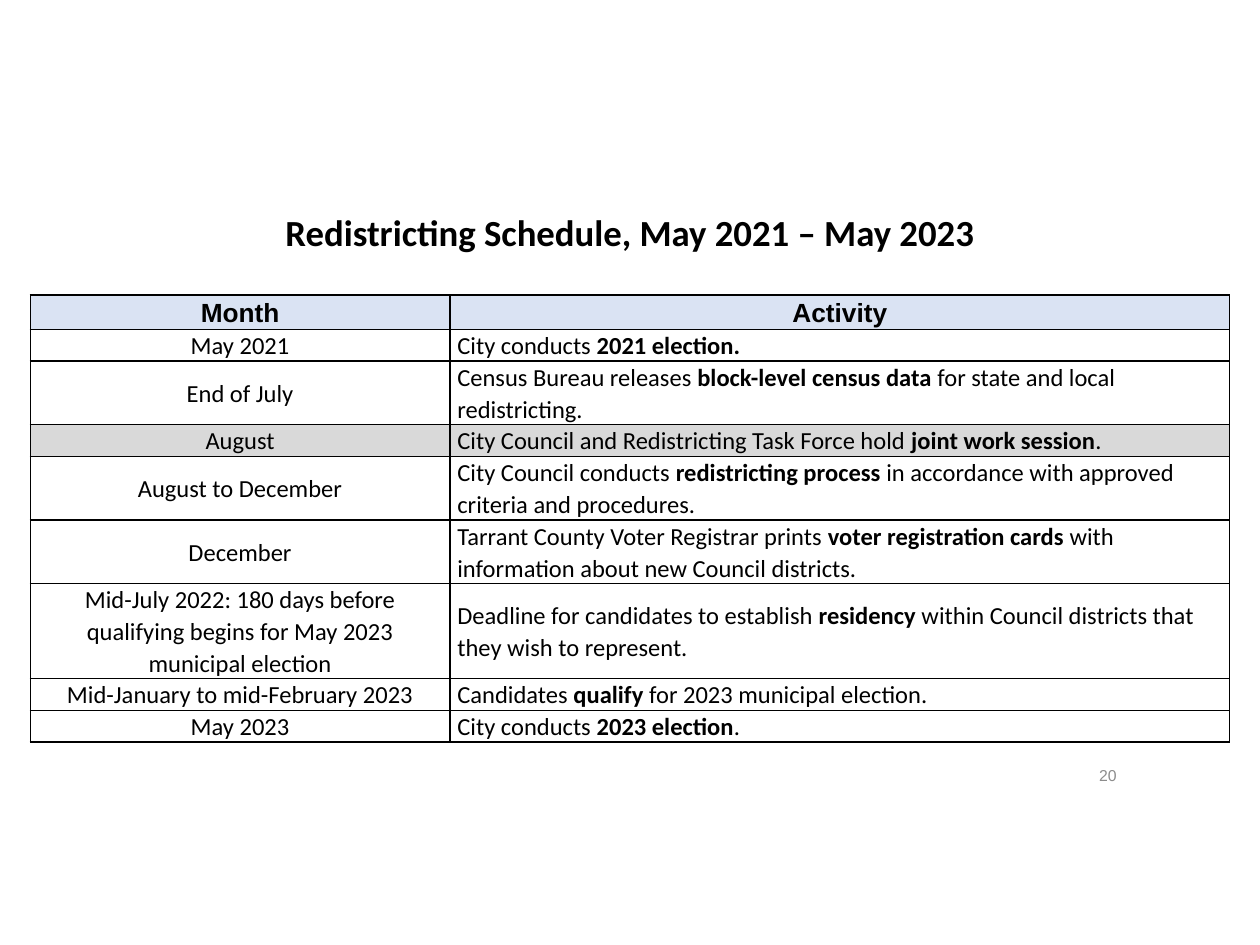
"""Build the redistricting schedule slide: a title, a two-column table and a page number."""
from lxml.etree import SubElement
from pptx import Presentation
from pptx.dml.color import RGBColor
from pptx.enum.text import MSO_ANCHOR as Anchor, PP_ALIGN as Align
from pptx.oxml.ns import qn
from pptx.util import Cm, Pt

TITLE = "Redistricting Schedule, May 2021 – May 2023"
PAGE_NUMBER = "20"
HEADINGS = ("Month", "Activity")
SCHEDULE = [
    ("May 2021", ("City conducts ", "2021 election."), 1),
    ("End of July", ("Census Bureau releases ", "block-level census data ",
                     "for state and local redistricting."), 2),
    ("August", ("City Council and Redistricting Task Force hold ",
                "joint work session", "."), 1),
    ("August to December", ("City Council conducts ", "redistricting process ",
                            "in accordance with approved criteria and procedures."), 2),
    ("December", ("Tarrant County Voter Registrar prints ", "voter registration cards ",
                  "with information about new Council districts."), 2),
    ("Mid-July 2022: 180 days before qualifying begins for May 2023 municipal election",
     ("Deadline for candidates to establish ", "residency",
      " within Council districts that they wish to represent."), 3),
    ("Mid-January to mid-February 2023",
     ("Candidates ", "qualify", " for 2023 municipal election."), 1),
    ("May 2023", ("City conducts ", "2023 election", "."), 1),
]
HIGHLIGHTED_MONTH = "August"
COLORS = {"text": "000000", "page": "8C8C8C", "border": "000000",
          "heading": "DAE3F3", "highlight": "D9D9D9"}
LEFT, TABLE_TOP = 0.61, 5.95
COLUMN_WIDTHS = (8.46, 15.72)
HEADING_HEIGHT, LINE_HEIGHT = 0.69, 0.64


def write_text(frame, parts, size, font="Calibri", color="text", align=Align.LEFT,
               spacing=1.0, bold=False):
    paragraph = frame.paragraphs[0]
    paragraph.alignment = align
    paragraph.line_spacing = spacing
    for index, part in enumerate(parts):
        run = paragraph.add_run()
        run.text = part
        run.font.name = font
        run.font.size = Pt(size)
        run.font.bold = bold or index == 1
        run.font.color.rgb = RGBColor.from_string(COLORS[color])


def add_text_box(slide, box, text, **text_format):
    frame = slide.shapes.add_textbox(*map(Cm, box)).text_frame
    frame.word_wrap = True
    frame.vertical_anchor = Anchor.MIDDLE
    write_text(frame, [text], **text_format)


def add_borders(cell):
    properties = cell._tc.get_or_add_tcPr()
    for side in ("a:lnL", "a:lnR", "a:lnT", "a:lnB"):
        line = SubElement(properties, qn(side), w=str(Pt(1)))
        fill = SubElement(line, qn("a:solidFill"))
        SubElement(fill, qn("a:srgbClr"), val=COLORS["border"])


def fill_cell(cell, parts, fill=None, **text_format):
    cell.vertical_anchor = Anchor.MIDDLE
    cell.margin_left = cell.margin_right = Cm(0.15)
    cell.margin_top = cell.margin_bottom = 0
    add_borders(cell)
    if fill:
        cell.fill.solid()
        cell.fill.fore_color.rgb = RGBColor.from_string(COLORS[fill])
    else:
        cell.fill.background()
    write_text(cell.text_frame, parts, spacing=1.07, **text_format)


def add_schedule(slide):
    heights = [HEADING_HEIGHT] + [LINE_HEIGHT * lines for _, _, lines in SCHEDULE]
    box = (LEFT, TABLE_TOP, sum(COLUMN_WIDTHS), sum(heights))
    table = slide.shapes.add_table(len(heights), len(HEADINGS), *map(Cm, box)).table
    table.first_row = table.horz_banding = False
    for column, width in zip(table.columns, COLUMN_WIDTHS):
        column.width = Cm(width)
    for row, height in zip(table.rows, heights):
        row.height = Cm(height)
    for index, heading in enumerate(HEADINGS):
        fill_cell(table.cell(0, index), [heading], fill="heading", size=15,
                  font="Arial", align=Align.CENTER, bold=True)
    for index, (month, activity, _) in enumerate(SCHEDULE, start=1):
        fill = "highlight" if month == HIGHLIGHTED_MONTH else None
        fill_cell(table.cell(index, 0), [month], fill=fill, size=14, align=Align.CENTER)
        fill_cell(table.cell(index, 1), activity, fill=fill, size=14)


def main():
    presentation = Presentation()
    presentation.slide_width, presentation.slide_height = Cm(25.4), Cm(19.05)
    slide = presentation.slides.add_slide(presentation.slide_layouts[6])
    add_text_box(slide, (LEFT, 4.17, sum(COLUMN_WIDTHS), 1.14), TITLE, size=21,
                 align=Align.CENTER, spacing=0.9, bold=True)
    add_text_box(slide, (17.04, 15.24, 5.72, 0.76), PAGE_NUMBER, size=9,
                 font="Arial", color="page", align=Align.RIGHT)
    add_schedule(slide)
    presentation.save("out.pptx")


if __name__ == "__main__":
    main()
